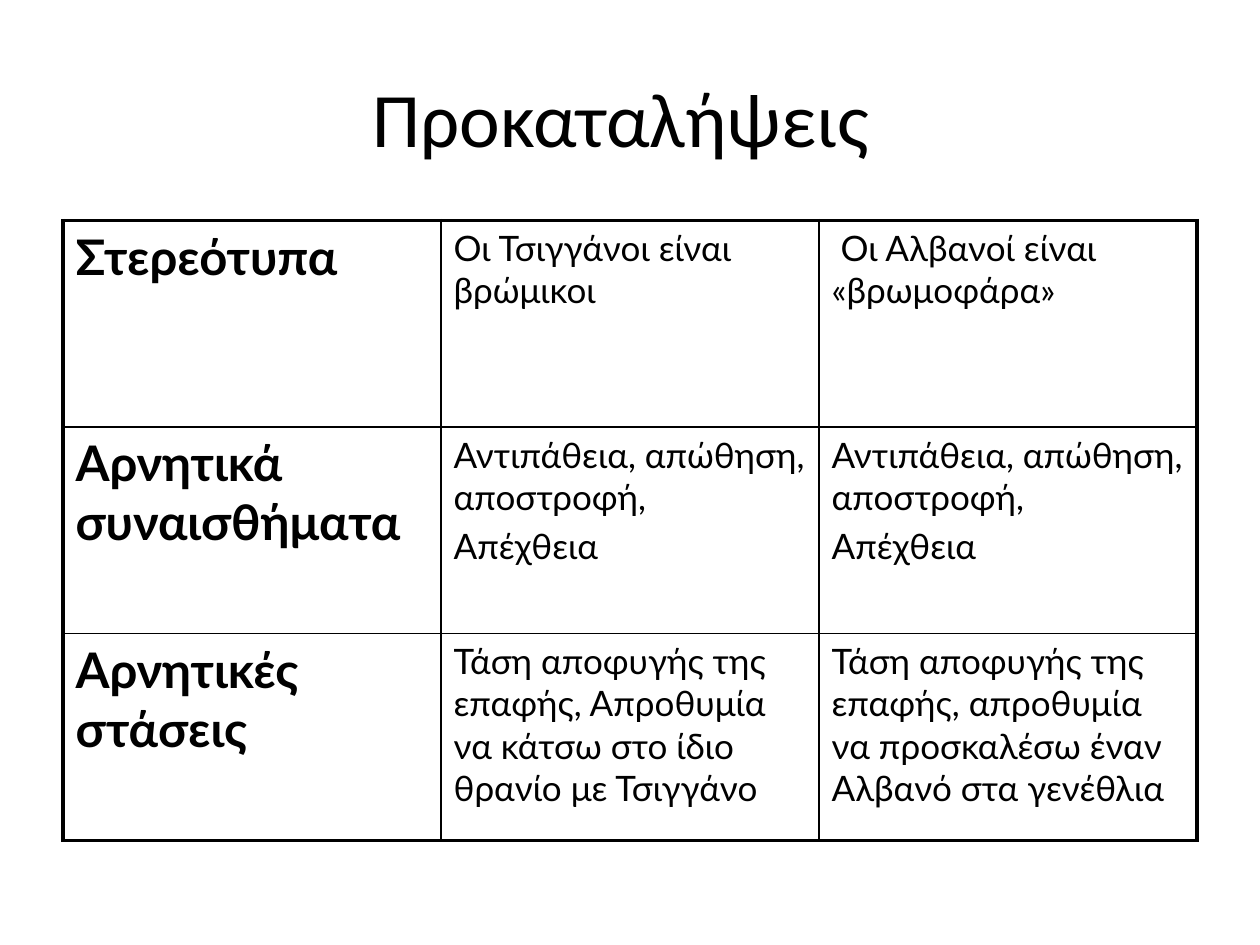
from lxml import etree
from pptx import Presentation
from pptx import util as u
from pptx.dml.color import RGBColor
from pptx.enum import text
from pptx.oxml.ns import qn

COLORS = {"ink": "000000", "paper": "FFFFFF"}
TITLE_FONT, TABLE_FONT = "Calibri", "Lato"
OUTER_LINE, INNER_LINE = 2.25, 1

# Each cell is a list of paragraphs.
ROWS = [
    [["Στερεότυπα"],
     ["Οι Τσιγγάνοι είναι βρώμικοι"],
     [" Οι Αλβανοί είναι «βρωμοφάρα»"]],
    [["Αρνητικά συναισθήματα"],
     ["Αντιπάθεια, απώθηση, αποστροφή,", "Απέχθεια"],
     ["Αντιπάθεια, απώθηση, αποστροφή,", "Απέχθεια"]],
    [["Αρνητικές στάσεις"],
     ["Τάση αποφυγής της επαφής, Απροθυμία να κάτσω στο ίδιο θρανίο με Τσιγγάνο"],
     ["Τάση αποφυγής της επαφής, απροθυμία να προσκαλέσω έναν Αλβανό στα γενέθλια"]],
]


def style_font(font, name, size, bold=False):
    font.name = name
    font.size = u.Pt(size)
    font.bold = bold
    font.color.rgb = RGBColor.from_string(COLORS["ink"])


def add_title(slide, title):
    box = slide.shapes.add_textbox(u.Inches(0.5), u.Inches(0.3), u.Inches(9), u.Inches(1.25))
    frame = box.text_frame
    frame.word_wrap = True
    frame.vertical_anchor = text.MSO_ANCHOR.MIDDLE
    paragraph = frame.paragraphs[0]
    paragraph.text = title
    paragraph.alignment = text.PP_ALIGN.CENTER
    style_font(paragraph.font, TITLE_FONT, 44)


def set_borders(cell, widths):
    """Draw the left, right, top and bottom borders, with widths in points."""
    properties = cell._tc.get_or_add_tcPr()
    for index, (side, width) in enumerate(zip("LRTB", widths)):
        line = etree.Element(qn(f"a:ln{side}"), w=str(u.Pt(width)))
        fill = etree.SubElement(line, qn("a:solidFill"))
        etree.SubElement(fill, qn("a:srgbClr"), val=COLORS["ink"])
        properties.insert(index, line)


def fill_cell(cell, lines, size, bold):
    cell.fill.solid()
    cell.fill.fore_color.rgb = RGBColor.from_string(COLORS["paper"])
    frame = cell.text_frame
    for index, line in enumerate(lines):
        paragraph = frame.add_paragraph() if index else frame.paragraphs[0]
        paragraph.text = line
        if index:
            paragraph.space_before = u.Pt(0.2 * size)
        style_font(paragraph.font, TABLE_FONT, size, bold)


def add_prejudice_table(slide, rows):
    last_row, last_column = len(rows) - 1, len(rows[0]) - 1
    table = slide.shapes.add_table(
        len(rows), len(rows[0]),
        u.Inches(0.5), u.Inches(1.75), u.Inches(9), u.Inches(4.92)).table
    table.first_row = table.horz_banding = False
    for r, row in enumerate(rows):
        for c, lines in enumerate(row):
            cell = table.cell(r, c)
            is_heading = c == 0
            fill_cell(cell, lines, 28 if is_heading else 20, is_heading)
            on_edge = (c == 0, c == last_column, r == 0, r == last_row)
            set_borders(cell, [OUTER_LINE if edge else INNER_LINE for edge in on_edge])


def main():
    presentation = Presentation()
    presentation.slide_width = u.Inches(10)
    presentation.slide_height = u.Inches(7.5)
    slide = presentation.slides.add_slide(presentation.slide_layouts[6])
    add_title(slide, "Προκαταλήψεις ")
    add_prejudice_table(slide, ROWS)
    presentation.save("out.pptx")


if __name__ == "__main__":
    main()
